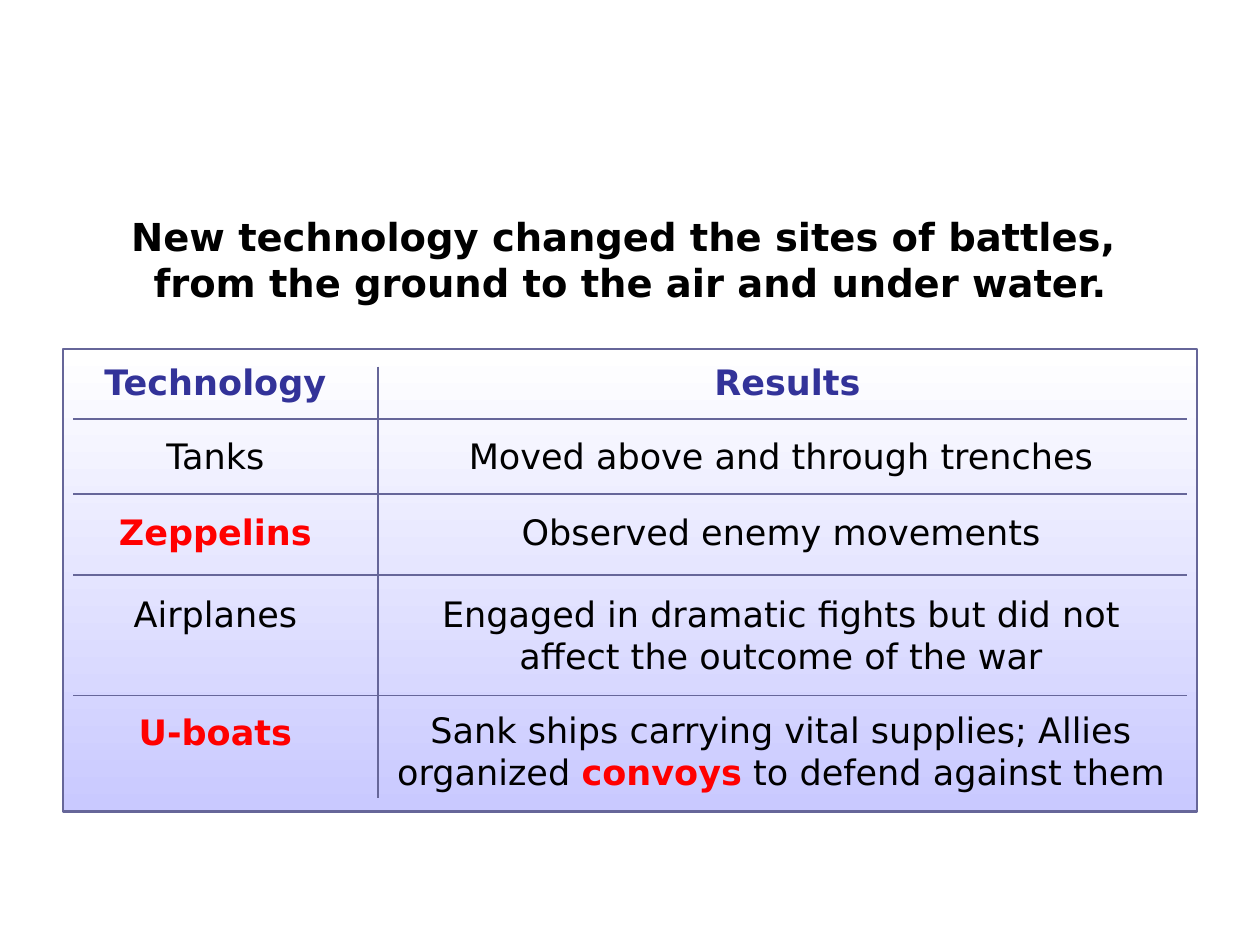
from pptx import Presentation
from pptx.dml.color import RGBColor
from pptx.enum.shapes import MSO_CONNECTOR, MSO_SHAPE
from pptx.enum.text import MSO_ANCHOR, PP_ALIGN
from pptx.oxml.ns import qn
from pptx.util import Pt
from lxml import etree

LINE = MSO_CONNECTOR.STRAIGHT
RECT = MSO_SHAPE.RECTANGLE
CENTER = PP_ALIGN.CENTER
TOP, MIDDLE = MSO_ANCHOR.TOP, MSO_ANCHOR.MIDDLE

FONT = "DejaVu Sans"
WHITE = RGBColor(0xFF, 0xFF, 0xFF)
BLACK = RGBColor(0x00, 0x00, 0x00)
RED = RGBColor(0xFF, 0x00, 0x00)
NAVY = RGBColor(0x33, 0x33, 0x99)
LAVENDER = RGBColor(0xC9, 0xC9, 0xFF)
RULE = RGBColor(0x66, 0x66, 0x99)

LEFT, SPLIT, WIDTH = 36, 216, 648
TERM_W, RESULT_W = 174.2, 460.8
HEAD_TOP, HEAD_H = 197.3, 41.8

prs = Presentation()
prs.slide_width, prs.slide_height = Pt(720), Pt(540)
s = prs.slides.add_slide(prs.slide_layouts[6])


def add_text(box, runs, size=20, inset=10.8, anchor=TOP):
    """Centred text; runs are (text, colour, bold) and box is in points."""
    tf = s.shapes.add_textbox(*map(Pt, box)).text_frame
    frame = {"word_wrap": True, "vertical_anchor": anchor}
    for side in ("left", "top", "right", "bottom"):
        frame["margin_" + side] = Pt(inset)
    for name, value in frame.items():
        setattr(tf, name, value)
    p = tf.paragraphs[0]
    p.alignment = CENTER
    for i, line in enumerate(runs):
        if i and line[0].startswith("\n"):
            p.add_line_break()
        text, color, bold = line
        r = p.add_run()
        r.text = text.lstrip("\n")
        for name, value in {"name": FONT, "size": Pt(size), "bold": bold}.items():
            setattr(r.font, name, value)
        r.font.color.rgb = color


def add_rule(x1, y1, x2, y2):
    rule = s.shapes.add_connector(LINE, Pt(x1), Pt(y1), Pt(x2), Pt(y2))
    rule.line.color.rgb = RULE
    rule.line.width = Pt(1)
    etree.SubElement(rule._element.spPr, qn("a:effectLst"))


# Gradient panel behind the table
panel = s.shapes.add_shape(RECT, Pt(LEFT), Pt(199.5), Pt(WIDTH), Pt(264.2))
panel.shadow.inherit = False
panel.line.color.rgb = RULE
panel.line.width = Pt(1.5)
panel.fill.gradient()
panel.fill.gradient_angle = 270
for stop, color, position in zip(panel.fill.gradient_stops, (WHITE, LAVENDER), (0, 1)):
    stop.color.rgb = color
    stop.position = position

# Title
add_text((LEFT, 118, WIDTH, 60),
         [("New technology changed the sites of battles, ", BLACK, True),
          ("\nfrom the ground to the air and under water.", BLACK, True)],
         size=22, inset=3.6)

# Column heads
for x, width, head in ((LEFT, TERM_W, "Technology"), (SPLIT, 468, "Results")):
    add_text((x, HEAD_TOP, width, HEAD_H), [(head, NAVY, True)],
             inset=3.6, anchor=MIDDLE)

# Rows: term top, result top, height, term, is key term, result runs
rows = [
    (237.6, 237.6, 64.8, "Tanks", False,
     [("Moved above and through trenches", BLACK, False)]),
    (280.8, 280.8, 46.8, "Zeppelins", True,
     [("Observed enemy movements", BLACK, False)]),
    (327.6, 327.6, 86.4, "Airplanes", False,
     [("Engaged in dramatic fights but did not affect the outcome of the war",
       BLACK, False)]),
    (395.3, 393.8, 86.4, "U-boats", True,
     [("Sank ships carrying vital supplies; Allies organized ", BLACK, False),
      ("convoys", RED, True),
      (" to defend against them", BLACK, False)]),
]
for term_top, result_top, height, term, key, result in rows:
    add_text((LEFT, term_top, TERM_W, height), [(term, RED if key else BLACK, key)])
    add_text((SPLIT, result_top, RESULT_W, height), result)

# Column divider and row rules
add_rule(SPLIT, 209.5, SPLIT, 455.8)
for y in (239.6, 282.3, 328.5, 397.4):
    add_rule(41.8, y, 678.2, y)

prs.save("out.pptx")
